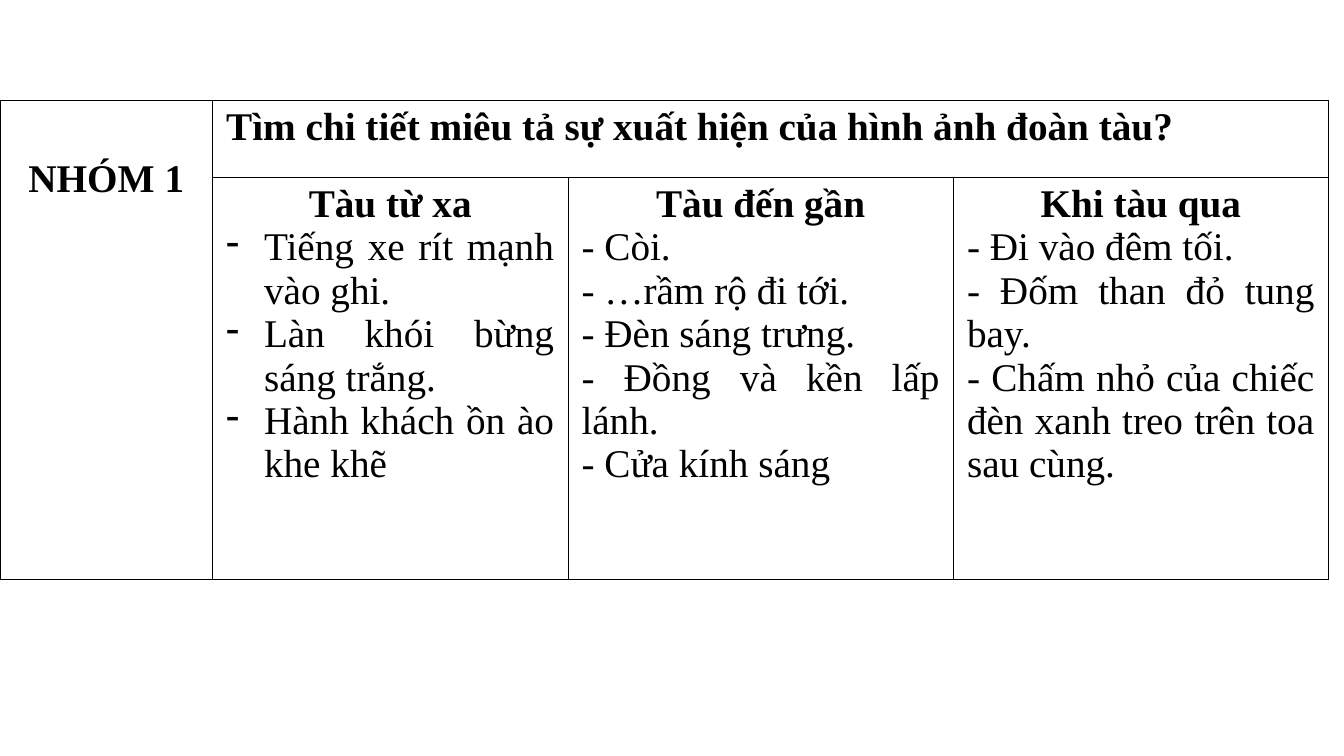
from pptx import Presentation
from pptx import util as u
from pptx.dml.color import RGBColor
from pptx.enum import text
from lxml import etree
from pptx.oxml import ns

BLACK = RGBColor(0, 0, 0)
FONT = "Times New Roman"
WIDTHS = [4.22, 7.05, 7.65, 7.44]
HEIGHTS = [1.52, 7.98]
STAGES = [
    ("Tàu từ xa", [
        "Tiếng xe rít mạnh vào ghi.",
        "Làn khói bừng sáng trắng.",
        "Hành khách ồn ào khe khẽ"]),
    ("Tàu đến gần", [
        "- Còi.",
        "- …rầm rộ đi tới.",
        "- Đèn sáng trưng.",
        "- Đồng và kền lấp lánh.",
        "- Cửa kính sáng"]),
    ("Khi tàu qua", [
        "- Đi vào đêm tối.",
        "- Đốm than đỏ tung bay.",
        "- Chấm nhỏ của chiếc đèn xanh treo trên toa sau cùng."]),
]


def write(para, words, align, bold=False, dash=False):
    para.text = words
    para.alignment = align
    if dash:
        props = para._p.get_or_add_pPr()
        props.set("marL", str(u.Inches(0.75)))
        props.set("indent", str(-u.Inches(0.75)))
        etree.SubElement(props, ns.qn("a:buChar"), char="-")
    font = para.font
    font.name = FONT
    font.size = u.Pt(56)
    font.bold = bold
    font.color.rgb = BLACK


def rule(cell, side, width):
    line = etree.SubElement(cell._tc.get_or_add_tcPr(), ns.qn("a:ln" + side), w=str(u.Pt(width)))
    fill = etree.SubElement(line, ns.qn("a:solidFill"))
    etree.SubElement(fill, ns.qn("a:srgbClr"), val=str(BLACK))


deck = Presentation()
deck.slide_width = u.Inches(26.67)
deck.slide_height = u.Inches(15)
slide = deck.slides.add_slide(deck.slide_layouts[6])

frame = slide.shapes.add_table(
    len(HEIGHTS), len(WIDTHS), 0, u.Inches(2),
    u.Inches(sum(WIDTHS)), u.Inches(sum(HEIGHTS)))
table = frame.table
table.first_row = False
table.horz_banding = False
for col, width in zip(table.columns, WIDTHS):
    col.width = u.Inches(width)
for row, height in zip(table.rows, HEIGHTS):
    row.height = u.Inches(height)

for r in range(len(HEIGHTS)):
    for c in range(len(WIDTHS)):
        cell = table.cell(r, c)
        cell.margin_left = cell.margin_right = u.Inches(0.27)
        cell.margin_top = cell.margin_bottom = u.Inches(0.1)
        rule(cell, "L", 2.25 if c == 0 else 1)
        rule(cell, "R", 2.25 if c == len(WIDTHS) - 1 else 1)
        rule(cell, "T", 2.25 if r == 0 else 1)
        rule(cell, "B", 1)
        cell.fill.background()

group = table.cell(0, 0)
group.merge(table.cell(1, 0))
group.margin_top = u.Inches(1.13)
write(group.text_frame.paragraphs[0], "NHÓM 1", text.PP_ALIGN.CENTER, bold=True)

task = table.cell(0, 1)
task.merge(table.cell(0, 3))
write(task.text_frame.paragraphs[0],
      "Tìm chi tiết miêu tả sự xuất hiện của hình ảnh đoàn tàu?",
      text.PP_ALIGN.LEFT, bold=True)

for c, (stage, notes) in enumerate(STAGES, 1):
    body = table.cell(1, c).text_frame
    write(body.paragraphs[0], stage, text.PP_ALIGN.CENTER, bold=True)
    for note in notes:
        write(body.add_paragraph(), note, text.PP_ALIGN.JUSTIFY, dash=c == 1)

deck.save("out.pptx")
